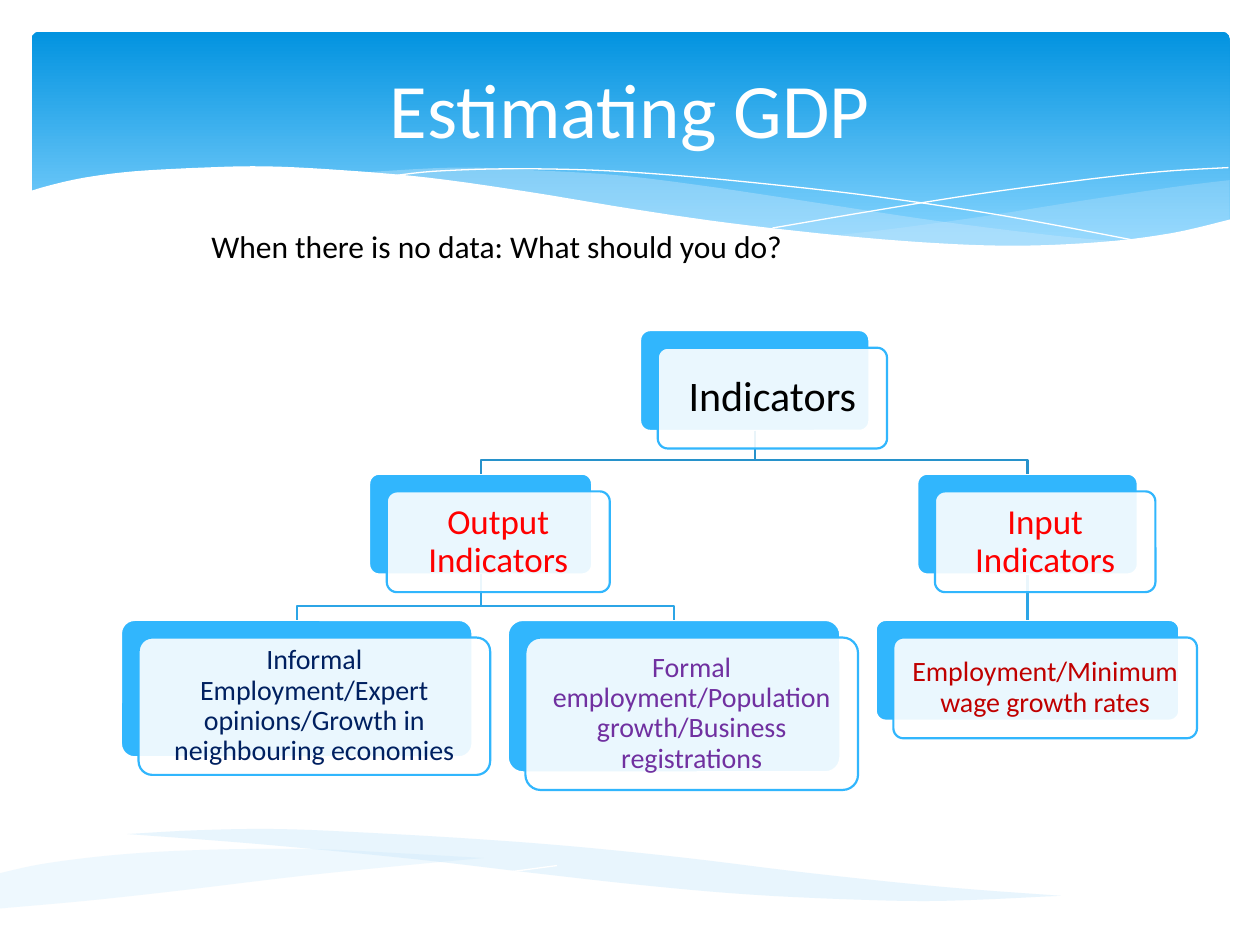
"""Build the slide on estimating GDP from output and input indicators."""
from typing import NamedTuple, Optional

from lxml import etree
from pptx import Presentation
from pptx.dml.color import RGBColor
from pptx.enum.shapes import MSO_CONNECTOR, MSO_SHAPE
from pptx.enum.text import MSO_ANCHOR, PP_ALIGN
from pptx.oxml.ns import qn
from pptx.util import Inches, Pt

ROUNDED = MSO_SHAPE.ROUNDED_RECTANGLE
STRAIGHT = MSO_CONNECTOR.STRAIGHT
MIDDLE, TOP = MSO_ANCHOR.MIDDLE, MSO_ANCHOR.TOP
CENTER, LEFT = PP_ALIGN.CENTER, PP_ALIGN.LEFT

COLORS = {
    "white": "FFFFFF", "black": "000000", "banner_top": "0293E0", "banner_end": "83D3FE",
    "wave": "C6E7FC", "card": "31B6FD", "upper_link": "2792CB", "lower_link": "2CA5E6",
    "red": "FF0000", "navy": "002060", "purple": "7030A0", "dark_red": "C00000",
}
CARD_OFFSET = 0.14
LINK_WIDTH = 1.25
BEND_ABOVE_CHILD = 0.11
CURVE_STEPS = 5

Point = tuple[float, float]
Edge = tuple[Point, ...]


class Wave(NamedTuple):
    """A curved band or line made of smooth edges that meet at corners."""
    edges: tuple[Edge, ...]
    fill: Optional[str] = None
    opacity: int = 100


class Card(NamedTuple):
    """One box of the indicator tree."""
    text: str
    left: float
    top: float
    width: float
    height: float
    size: int
    color: str
    margin: float
    parent: Optional[str] = None


WAVES = (
    Wave((((9.76, 1.43), (9.35, 1.48), (8.61, 1.59), (7.79, 1.72), (7.06, 1.82), (6.61, 1.87)),
          ((6.61, 1.87), (7.05, 1.91), (7.57, 1.94), (8.14, 1.96), (8.72, 1.93), (9.21, 1.87),
           (9.76, 1.75))), "wave", 29),
    Wave((((8.93, 1.92), (8.37, 1.87), (7.41, 1.75), (6.29, 1.58), (5.55, 1.47), (4.89, 1.39),
           (4.2, 1.35), (3.61, 1.33), (2.86, 1.37)),
          ((2.86, 1.37), (3.62, 1.45), (4.49, 1.58), (5.3, 1.71), (6.01, 1.81), (6.65, 1.88),
           (7.22, 1.93), (7.85, 1.96), (8.48, 1.96), (8.93, 1.92))), "wave", 40),
    Wave((((3.09, 1.4), (3.44, 1.36), (4.01, 1.34), (4.69, 1.35), (5.33, 1.39), (6.08, 1.46),
           (6.95, 1.56), (7.95, 1.71), (9.07, 1.92)),)),
    Wave((((6.13, 1.81), (6.95, 1.67), (7.76, 1.54), (8.66, 1.42), (9.24, 1.36), (9.75, 1.33)),)),
    Wave((((9.77, 1.74), (9.3, 1.85), (8.75, 1.92), (8.09, 1.95), (7.44, 1.93), (6.68, 1.87),
           (5.79, 1.77), (5.03, 1.66), (4.18, 1.52), (3.4, 1.41), (2.71, 1.35), (2.11, 1.32),
           (1.61, 1.33), (1.06, 1.36), (0.67, 1.41), (0.4, 1.47), (0.23, 1.52)),
          ((0.23, 2.3),), ((9.77, 2.3),)), "white"),
    Wave((((1.01, 6.62), (2.06, 6.7), (3.3, 6.82), (4.24, 6.93), (5.14, 7.03), (5.95, 7.1),
           (6.79, 7.14), (7.5, 7.15), (8.42, 7.11)),
          ((8.42, 7.11), (7.49, 7.04), (6.43, 6.93), (5.45, 6.81), (4.57, 6.72), (3.79, 6.66),
           (2.93, 6.61), (2.2, 6.58), (1.56, 6.59), (1.01, 6.62))), "wave", 40),
    Wave((((8.14, 7.24), (7.72, 7.27), (7.02, 7.29), (6.19, 7.28), (5.12, 7.23), (4.15, 7.16),
           (3.04, 7.05), (1.77, 6.9), (0.84, 6.78)),)),
    Wave((((4.42, 6.87), (3.43, 7), (2.44, 7.11), (1.34, 7.22), (0.64, 7.27), (0.01, 7.3)),)),
    Wave((((0, 7.21), (0.68, 7.15), (1.41, 7.07), (2.41, 6.95), (3.3, 6.86), (3.84, 6.81)),
          ((3.84, 6.81), (3.14, 6.77), (2.53, 6.74), (1.85, 6.74), (1.27, 6.76), (0.77, 6.8),
           (0.32, 6.86), (0, 6.93))), "wave", 29),
)

CARDS = {
    "root": Card("Indicators", 5.08, 2.62, 1.82, 0.8, 24, "black", 0.1),
    "output": Card("Output Indicators", 2.93, 3.76, 1.77, 0.8, 20, "red", 0.08, "root"),
    "informal": Card("Informal Employment/Expert opinions/Growth in neighbouring economies",
                     0.96, 4.92, 2.79, 1.09, 16, "navy", 0.07, "output"),
    "formal": Card("Formal employment/Population growth/Business registrations",
                   4.03, 4.92, 2.64, 1.21, 16, "purple", 0.07, "output"),
    "input": Card("Input Indicators", 7.28, 3.76, 1.75, 0.8, 20, "red", 0.08, "root"),
    "employment": Card("Employment/Minimum wage growth rates",
                       6.95, 4.92, 2.41, 0.8, 16, "dark_red", 0.07, "input"),
}


def rgb(name: str) -> RGBColor:
    """Return a named colour."""
    return RGBColor.from_string(COLORS[name])


def set_all(target, values: dict) -> None:
    """Set every attribute in a dict of format values."""
    for name, value in values.items():
        setattr(target, name, value)


def paint(shape, fill: Optional[str], line: Optional[str], width: float = LINK_WIDTH,
          opacity: int = 100) -> None:
    """Set the fill, opacity and outline of a shape."""
    shape.shadow.inherit = False
    if fill:
        shape.fill.solid()
        shape.fill.fore_color.rgb = rgb(fill)
        if opacity < 100:
            color = next(shape.element.spPr.iter(qn("a:srgbClr")))
            etree.SubElement(color, qn("a:alpha"), val=str(opacity * 1000))
    else:
        shape.fill.background()
    if line:
        shape.line.color.rgb = rgb(line)
        shape.line.width = Pt(width)
    else:
        shape.line.fill.background()


def write(shape, text: str, size: int, color: str, align, frame_format: dict,
          spacing: float = 1.0) -> None:
    """Put one formatted paragraph into a shape."""
    frame = shape.text_frame
    set_all(frame, frame_format)
    para = frame.paragraphs[0]
    set_all(para, {"alignment": align, "line_spacing": spacing})
    span = para.add_run()
    span.text = text
    set_all(span.font, {"name": "Calibri", "size": Pt(size)})
    span.font.color.rgb = rgb(color)


def smooth(edge: Edge) -> list[Point]:
    """Return points along a Catmull-Rom curve through an edge."""
    padded = (edge[0], *edge, edge[-1])
    points = [edge[0]]
    for a, b, c, d in zip(padded, padded[1:], padded[2:], padded[3:]):
        for step in range(1, CURVE_STEPS + 1):
            t = step / CURVE_STEPS
            points.append(tuple(
                q + 0.5 * t * (r - p + t * (2 * p - 5 * q + 4 * r - s + t * (3 * (q - r) + s - p)))
                for p, q, r, s in zip(a, b, c, d)))
    return points


def draw_outline(shapes, points: list[Point], close: bool):
    """Draw a freeform through points given in inches."""
    (start_x, start_y), *rest = [(Inches(x), Inches(y)) for x, y in points]
    builder = shapes.build_freeform(start_x, start_y)
    builder.add_line_segments(rest, close=close)
    return builder.convert_to_shape()


def draw_wave(shapes, wave: Wave) -> None:
    """Draw a filled wave or a thin white curve."""
    points = [point for edge in wave.edges for point in smooth(edge)]
    outline = draw_outline(shapes, points, bool(wave.fill))
    paint(outline, wave.fill, None if wave.fill else "white", 0, wave.opacity)


def draw_panel(shapes, card: Card, offset: float, fill: str, line: str, opacity: int = 100):
    """Draw one of the two rounded panels of a card."""
    panel = shapes.add_shape(ROUNDED, Inches(card.left + offset), Inches(card.top + offset),
                             Inches(card.width), Inches(card.height))
    panel.adjustments[0] = 0.1
    paint(panel, fill, line, opacity=opacity)
    return panel


def draw_link(shapes, parent: Card, child: Card, parent_panel, child_panel) -> None:
    """Link a parent card to a child card."""
    start_x, end_x = (card.left + card.width / 2 for card in (parent, child))
    start_y, end_y = parent.top + parent.height, child.top
    color = "lower_link" if parent.parent else "upper_link"
    if abs(start_x - end_x) < 0.01:
        link = shapes.add_connector(STRAIGHT, Inches(start_x), Inches(start_y),
                                    Inches(end_x), Inches(end_y))
        link.begin_connect(parent_panel, 2)
        link.end_connect(child_panel, 0)
        set_all(link.line, {"width": Pt(LINK_WIDTH)})
        link.line.color.rgb = rgb(color)
        etree.SubElement(link.element.spPr, qn("a:effectLst"))
    else:
        bend = end_y - BEND_ABOVE_CHILD
        points = [(start_x, start_y), (start_x, bend), (end_x, bend), (end_x, end_y)]
        paint(draw_outline(shapes, points, False), None, color)


def main() -> None:
    """Build and save the deck."""
    deck = Presentation()
    set_all(deck, {"slide_width": Inches(10), "slide_height": Inches(7.5)})
    shapes = deck.slides.add_slide(deck.slide_layouts[6]).shapes

    banner = shapes.add_shape(ROUNDED, Inches(0.25), Inches(0.25), Inches(9.51), Inches(1.82))
    banner.adjustments[0] = 0.034
    paint(banner, None, None)
    banner.fill.gradient()
    banner.fill.gradient_angle = 270
    stops = (("banner_top", 0), ("banner_end", 0.9))
    for stop, (color, position) in zip(banner.fill.gradient_stops, stops):
        stop.color.rgb = rgb(color)
        stop.position = position
    for wave in WAVES:
        draw_wave(shapes, wave)

    panels = {key: draw_panel(shapes, card, 0, "card", "white") for key, card in CARDS.items()}
    for key, card in CARDS.items():
        if card.parent:
            draw_link(shapes, CARDS[card.parent], card, panels[card.parent], panels[key])
    for card in CARDS.values():
        front = draw_panel(shapes, card, CARD_OFFSET, "white", "card", 90)
        sides = ("margin_left", "margin_right", "margin_top", "margin_bottom")
        margins = dict.fromkeys(sides, Inches(card.margin))
        write(front, card.text, card.size, card.color, CENTER,
              {"word_wrap": True, "vertical_anchor": MIDDLE, **margins}, 0.9)

    title = shapes.add_textbox(Inches(0.5), Inches(0.17), Inches(9), Inches(1.37))
    write(title, "Estimating GDP", 44, "white", CENTER,
          {"word_wrap": True, "vertical_anchor": MIDDLE})
    question = shapes.add_textbox(Inches(1.58), Inches(1.75), Inches(4.87), Inches(0.4))
    write(question, "When there is no data: What should you do?", 18, "black", LEFT,
          {"word_wrap": False, "vertical_anchor": TOP})
    deck.save("out.pptx")


if __name__ == "__main__":
    main()
